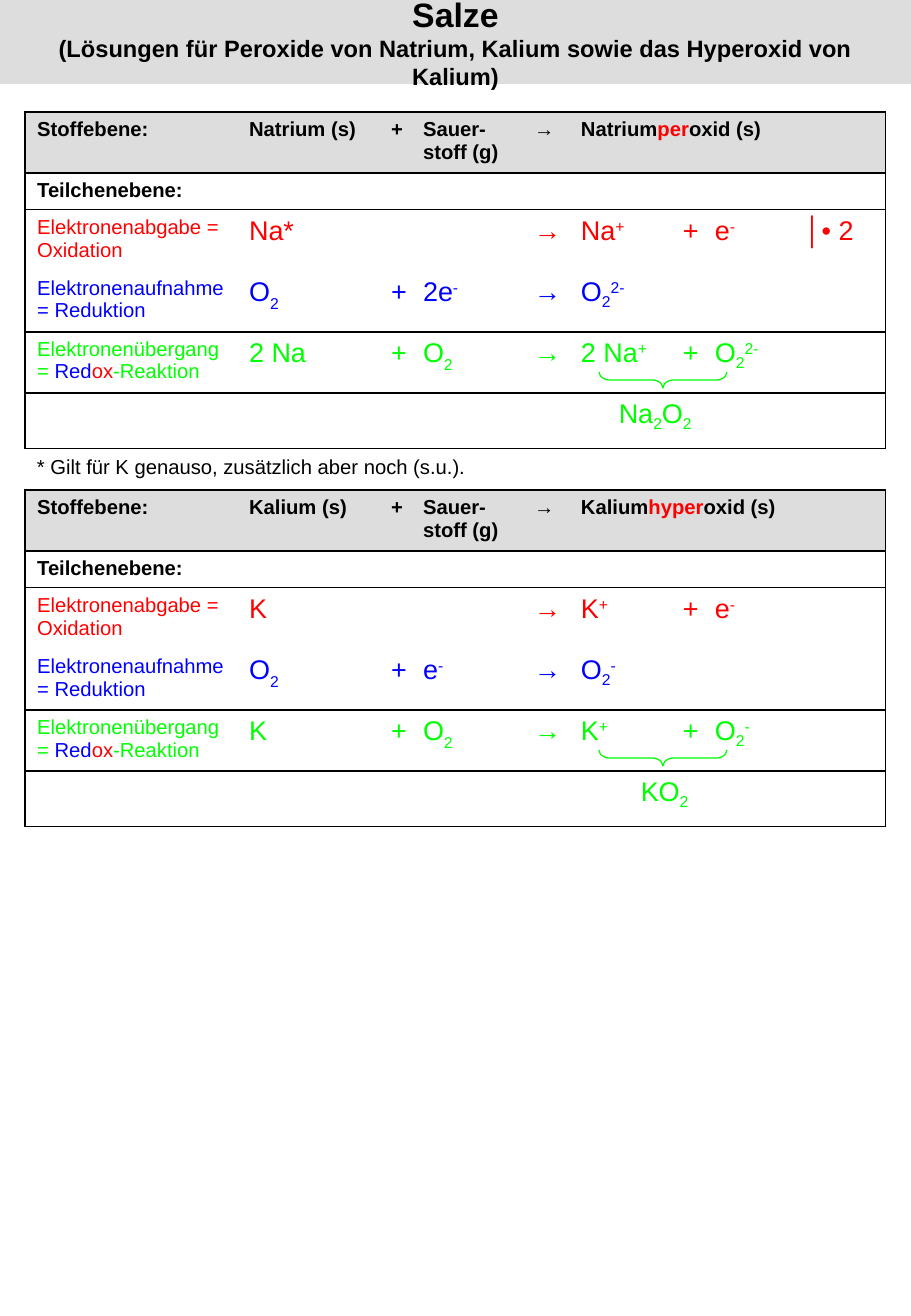
from lxml.etree import SubElement
from pptx import Presentation
from pptx.dml.color import RGBColor
from pptx.enum.shapes import MSO_SHAPE as Shape
from pptx.enum.text import MSO_ANCHOR as Anchor, MSO_AUTO_SIZE as AutoSize, PP_ALIGN as Align
from pptx.oxml.ns import qn
from pptx.util import Pt

PX = 7526
BLACK = RGBColor(0x00, 0x00, 0x00)
GREY = RGBColor(0xDD, 0xDD, 0xDD)
RED = RGBColor(0xFF, 0x00, 0x00)
BLUE = RGBColor(0x00, 0x00, 0xFF)
GREEN = RGBColor(0x00, 0xFF, 0x00)

PAGE_WIDTH, PAGE_HEIGHT = 911, 1316
LEFT, INSET = 25, 12
COLUMNS = [212, 142, 32, 111, 47, 102, 32, 90, 93]
ROWS = [61, 36, 61, 61, 61, 56]
HEADER, PARTICLES, OXIDATION, REDUCTION, REDOX, PRODUCT = range(6)
PRODUCT_COLUMN, LAST_COLUMN = 5, 8
BRACE_DROP = 204
NO_STYLE = "{2D5ABB26-0587-4C30-8999-92F81FD0307C}"
BASELINES = {"_": "-30000", "~": "-25000", "^": "30000"}

LABELS = {
    OXIDATION: [("Elektronenabgabe = Oxidation", RED)],
    REDUCTION: [("Elektronenaufnahme = Reduktion", BLUE)],
    REDOX: [("Elektronenübergang = ", GREEN), ("Red", BLUE), ("ox", RED), ("-Reaktion", GREEN)],
}
EQUATION_COLORS = {OXIDATION: RED, REDUCTION: BLUE, REDOX: GREEN}

SODIUM = {
    "metal": "Natrium",
    "prefix": "per",
    OXIDATION: ["Na*", "", "", "→", "Na|^+", "+", "e|^-", "│• 2"],
    REDUCTION: ["O|_2", "+", "2e|^-", "→", "O|~2|^2-", "", "", ""],
    REDOX: ["2 Na", "+", "O|_2", "→", "2 Na|^+", "+", "O|~2|^2-", ""],
    PRODUCT: "Na|~2|O|~2",
    "product_indent": 38,
}
POTASSIUM = {
    "metal": "Kalium",
    "prefix": "hyper",
    OXIDATION: ["K", "", "", "→", "K|^+", "+", "e|^-", ""],
    REDUCTION: ["O|_2", "+", "e|^-", "→", "O|~2|^-", "", "", ""],
    REDOX: ["K", "+", "O|_2", "→", "K|^+", "+", "O|~2|^-", ""],
    PRODUCT: "KO|~2",
    "product_indent": 60,
}


def place(shape, left, top, width, height):
    box = {"left": left, "top": top, "width": width, "height": height}
    for side, length in box.items():
        setattr(shape, side, length * PX)


def add_run(paragraph, text, color, size, bold=False):
    run = paragraph.add_run()
    run.text = text
    run.font.color.rgb = color
    for name, value in {"name": "Arial", "size": Pt(size), "bold": bold}.items():
        setattr(run.font, name, value)
    return run


def write_words(cell, pieces, bold=False):
    for text, color in pieces:
        add_run(cell.text_frame.paragraphs[0], text, color, 12, bold)


def write_formula(cell, formula, color):
    """Pieces are split by |; a leading _ or ~ lowers a piece, ^ raises it."""
    for piece in filter(None, formula.split("|")):
        baseline = BASELINES.get(piece[0])
        text = piece[1:] if baseline else piece
        run = add_run(cell.text_frame.paragraphs[0], text, color, 16)
        if baseline:
            run.font._element.set("baseline", baseline)


def draw_border(cell, side, points):
    line = SubElement(cell._tc.get_or_add_tcPr(), qn(f"a:ln{side}"), w=str(Pt(points)))
    fill = SubElement(line, qn("a:solidFill"))
    SubElement(fill, qn("a:srgbClr"), val=str(BLACK))


def format_cell(cell, row, column):
    if column == 0:
        draw_border(cell, "L", 0.75)
    if column == LAST_COLUMN or cell.is_merge_origin:
        draw_border(cell, "R", 0.75)
    if row in (HEADER, PARTICLES, REDOX):
        draw_border(cell, "T", 1 if row == REDOX else 0.75)
    if row in (HEADER, REDUCTION, PRODUCT):
        draw_border(cell, "B", 1 if row == REDUCTION else 0.75)
    if row == HEADER:
        cell.fill.solid()
        cell.fill.fore_color.rgb = GREY
    else:
        cell.fill.background()
    if not cell.text_frame.text:
        SubElement(cell.text_frame.paragraphs[0]._p, qn("a:endParaRPr"), sz="1200")


def add_reaction_table(slide, top, reaction):
    frame = slide.shapes.add_table(len(ROWS), len(COLUMNS), LEFT * PX, top * PX,
                                   sum(COLUMNS) * PX, sum(ROWS) * PX)
    table = frame.table
    table.first_row = table.horz_banding = False
    table._tbl.tblPr.find(qn("a:tableStyleId")).text = NO_STYLE
    for column, width in zip(table.columns, COLUMNS):
        column.width = width * PX
    for row, height in zip(table.rows, ROWS):
        row.height = height * PX
    for row, first in ((HEADER, PRODUCT_COLUMN), (PARTICLES, 7), (PRODUCT, PRODUCT_COLUMN)):
        table.cell(row, first).merge(table.cell(row, LAST_COLUMN))

    metal = reaction["metal"]
    headings = ["Stoffebene:", f"{metal} (s)", "+", "Sauer-stoff (g)", "→"]
    for column, heading in enumerate(headings):
        write_words(table.cell(HEADER, column), [(heading, BLACK)], bold=True)
    oxide = [(metal, BLACK), (reaction["prefix"], RED), ("oxid (s)", BLACK)]
    write_words(table.cell(HEADER, PRODUCT_COLUMN), oxide, bold=True)
    write_words(table.cell(PARTICLES, 0), [("Teilchenebene:", BLACK)], bold=True)
    for row, color in EQUATION_COLORS.items():
        write_words(table.cell(row, 0), LABELS[row])
        for column, formula in enumerate(reaction[row], start=1):
            write_formula(table.cell(row, column), formula, color)
    product = table.cell(PRODUCT, PRODUCT_COLUMN)
    product.margin_left = (INSET + reaction["product_indent"]) * PX
    write_formula(product, reaction[PRODUCT], GREEN)

    for row in range(len(ROWS)):
        for column in range(len(COLUMNS)):
            format_cell(table.cell(row, column), row, column)


def add_brace(slide, top):
    brace = slide.shapes.add_shape(Shape.LEFT_BRACE, 655 * PX, top * PX, 16 * PX, 128 * PX)
    brace.rotation = 270
    brace.adjustments[0] = 0.68
    brace.adjustments[1] = 0.5
    brace.shadow.inherit = False
    brace.fill.background()
    brace.line.color.rgb = GREEN
    brace.line.width = Pt(0.75)


def fill_title(title):
    place(title, 0, 0, PAGE_WIDTH, 84)
    title.fill.solid()
    title.fill.fore_color.rgb = GREY
    frame = title.text_frame
    layout = {"auto_size": AutoSize.NONE, "vertical_anchor": Anchor.MIDDLE, "word_wrap": True,
              "margin_left": 20 * PX, "margin_right": 20 * PX}
    for name, value in layout.items():
        setattr(frame, name, value)
    heading = frame.paragraphs[0]
    heading.alignment = Align.CENTER
    add_run(heading, "Salze", BLACK, 20, bold=True)
    heading.add_line_break()
    SubElement(heading._p.find(qn("a:br")), qn("a:rPr"), sz="2000")
    subtitle = "(Lösungen für Peroxide von Natrium, Kalium sowie das Hyperoxid von Kalium)"
    add_run(heading, subtitle, BLACK, 14, bold=True)


def add_footnote(slide, top):
    note = slide.shapes.add_textbox(LEFT * PX, top * PX, sum(COLUMNS) * PX, 36 * PX)
    note.text_frame.word_wrap = True
    add_run(note.text_frame.paragraphs[0],
            "* Gilt für K genauso, zusätzlich aber noch (s.u.).", BLACK, 12)


def main():
    deck = Presentation()
    deck.slide_width, deck.slide_height = PAGE_WIDTH * PX, PAGE_HEIGHT * PX
    slide = deck.slides.add_slide(deck.slide_layouts[5])
    fill_title(slide.shapes.title)
    for top, reaction in ((112, SODIUM), (490, POTASSIUM)):
        add_reaction_table(slide, top, reaction)
        add_brace(slide, top + BRACE_DROP)
    add_footnote(slide, 448)
    deck.save("out.pptx")


if __name__ == "__main__":
    main()
